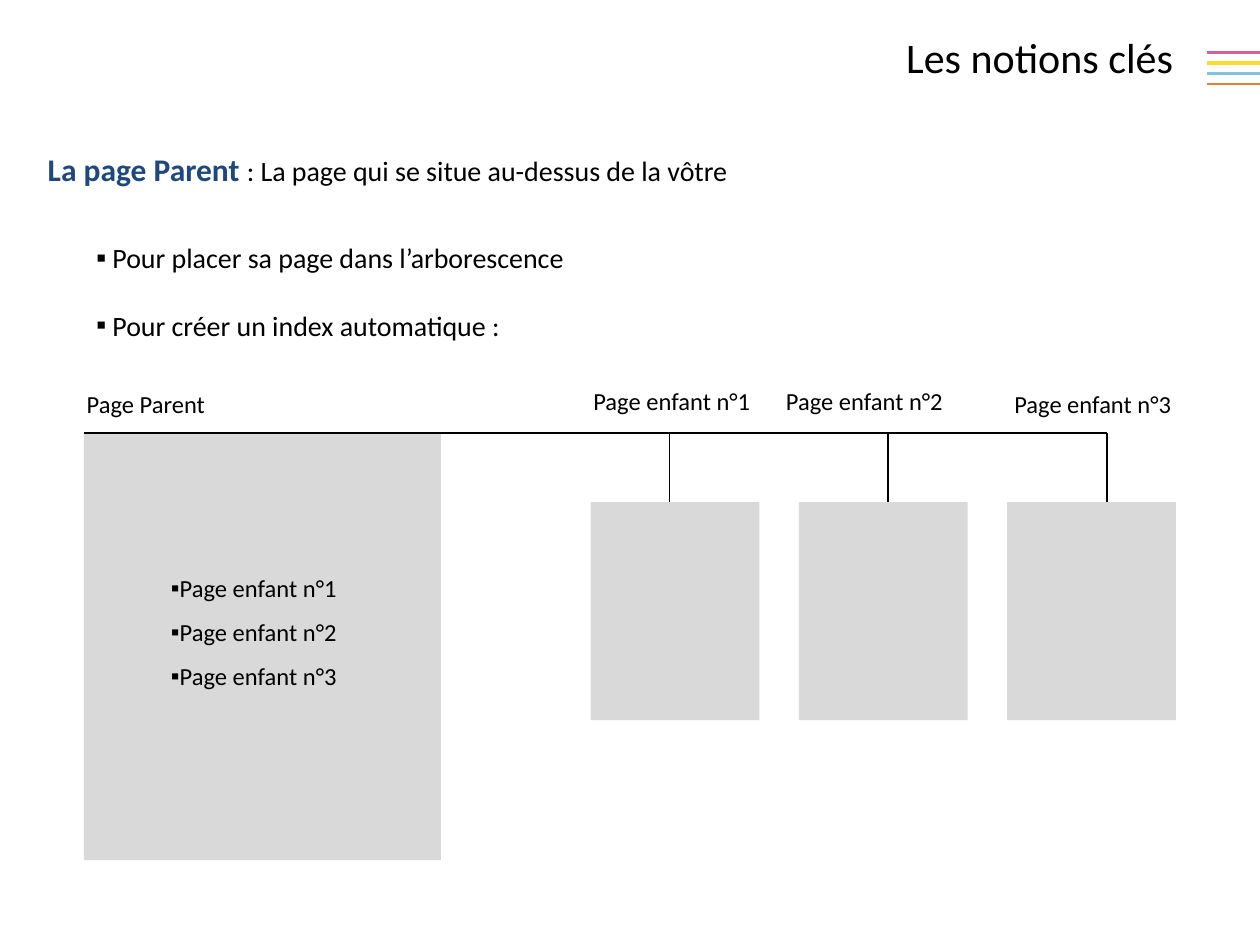
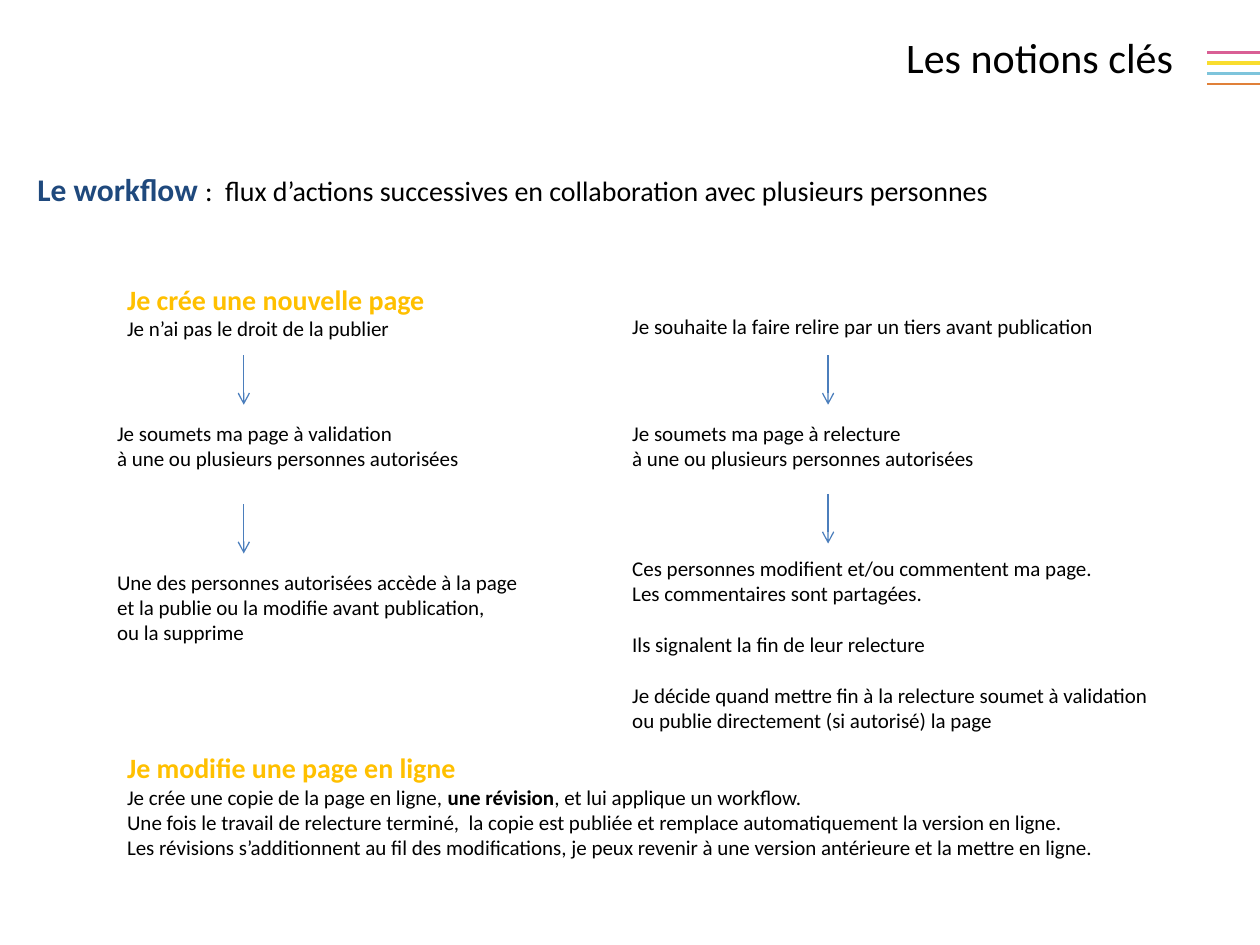
import pptx
import pptx.dml.color
import pptx.enum.shapes
import pptx.enum.text
import pptx.util
from lxml import etree
from pptx.oxml.ns import qn

Pt = pptx.util.Pt
Align = pptx.enum.text.PP_ALIGN


class Theme:
    font = "Calibri"
    black, blue, gold = "000000", "1F497D", "FFC000"
    panel, arrow = "D9D9D9", "4B7EBC"
    # Colour and width of each stripe, top to bottom
    bands = [("D95F95", 1.25), ("F9DD2E", 2), ("7EC4DB", 1.75), ("E08039", 1.5)]
    # Style: size, colour, bold
    styles = {
        "title": (24, black, False),
        "term": (18, blue, True),
        "lead": (16, black, False),
        "head": (16, gold, True),
        "label": (14, black, False),
        "note": (12, black, False),
        "strong": (12, black, True),
    }


# Basic helpers
def apply(target, values):
    for name, value in values.items():
        setattr(target, name, value)


def color(code):
    return pptx.dml.color.RGBColor.from_string(code)


def para(*runs, **form):
    return runs, form


def bullet(item, indent, face):
    """Give a paragraph a small square bullet with a hanging indent."""
    props = item._p.get_or_add_pPr()
    apply_xml = {"marL": Pt(indent), "indent": -Pt(indent)}
    for name, value in apply_xml.items():
        props.set(name, str(value))
    etree.SubElement(props, qn("a:buFont")).set("typeface", face)
    etree.SubElement(props, qn("a:buChar")).set("char", "▪")


# Kinds of element
def text(slide, box, paras, style="note", wrap=False, mark=None):
    """Each paragraph is a string, or para() with (text, style) runs."""
    frame = slide.shapes.add_textbox(*map(Pt, box)).text_frame
    apply(frame, {"word_wrap": wrap,
                  "auto_size": pptx.enum.text.MSO_AUTO_SIZE.SHAPE_TO_FIT_TEXT})
    for index, entry in enumerate(paras):
        runs, form = para(entry) if isinstance(entry, str) else entry
        item = frame.add_paragraph() if index else frame.paragraphs[0]
        apply(item, form)
        if mark:
            bullet(item, *mark)
        for part in runs:
            words, kind = (part, style) if isinstance(part, str) else part
            size, tint, bold = Theme.styles[kind]
            run = item.add_run()
            run.text = words
            apply(run.font, {"name": Theme.font, "size": Pt(size), "bold": bold})
            run.font.color.rgb = color(tint)


def panel(slide, box):
    kind = pptx.enum.shapes.MSO_SHAPE.RECTANGLE
    shape = slide.shapes.add_shape(kind, *map(Pt, box))
    shape.shadow.inherit = False
    shape.fill.solid()
    shape.fill.fore_color.rgb = color(Theme.panel)
    shape.line.fill.background()


def line(slide, ends, tint=Theme.black, width=0.75, arrow=False):
    kind = pptx.enum.shapes.MSO_CONNECTOR.STRAIGHT
    link = slide.shapes.add_connector(kind, *map(Pt, ends))
    link.line.color.rgb = color(tint)
    link.line.width = Pt(width)
    if arrow:
        etree.SubElement(link.line._get_or_add_ln(), qn("a:tailEnd")).set("type", "arrow")
    etree.SubElement(link._element.spPr, qn("a:effectLst"))


def start(deck, title):
    """Add a slide with the shared stripes and title."""
    slide = deck.slides.add_slide(deck.slide_layouts[6])
    for row, (tint, width) in enumerate(Theme.bands):
        y = 30 + 6 * row
        line(slide, (690, y, 720, y), tint, width)
    text(slide, (509, 14.4, 168.5, 58.3), [para(title, alignment=Align.RIGHT)], "title")
    return slide


# Slides
def parent(deck):
    slide = start(deck, "Les notions clés")
    text(slide, (20.2, 82, 407.5, 29),
         [para(("La page Parent ", "term"), ": La page qui se situe au-dessus de la vôtre")],
         "lead")
    text(slide, (48, 134, 360, 65.5),
         ["Pour placer sa page dans l’arborescence",
          para("Pour créer un index automatique :", space_before=Pt(19.5))],
         "lead", wrap=True, mark=(9.2, Theme.font))

    # Parent page and its index
    top, low = 247.5, 287
    panel(slide, (48, top, 204, 244))
    kids = [f"Page enfant n°{number}" for number in (1, 2, 3)]
    text(slide, (42.5, 218.8, 83, 24.5), ["Page Parent"], "label")
    text(slide, (90.6, 315.4, 110, 83.5),
         [para(kid, line_spacing=1.5) for kid in kids], "label", mark=(5, "Arial"))

    # Child pages hung from the trunk
    spots = [(332, 217.3), (442, 217.3), (572.5, 218.8)]
    for index, (kid, spot) in enumerate(zip(kids, spots)):
        panel(slide, (337.5 + 119 * index, low, 96.5, 124.5))
        stem = 382.5 + 125 * index
        line(slide, (stem, top, stem, low))
        text(slide, (*spot, 105, 24.5), [kid], "label")
    line(slide, (48, top, 632.5, top))


def flow(deck):
    slide = start(deck, "Les notions clés")
    text(slide, (14.3, 93.6, 565.2, 29),
         [para(("Le workflow ", "term"),
               ":  flux d’actions successives en collaboration avec plusieurs personnes")],
         "lead")

    # Steps of the two columns
    left, right, gap = 59.8, 354.2, Pt(14.6)
    who = "à une ou plusieurs personnes autorisées"
    text(slide, (65.5, 157.7, 186.5, 85),
         [para(("Je crée une nouvelle page", "head")), "Je n’ai pas le droit de la publier"])
    text(slide, (right, 175.7, 281, 21.6),
         ["Je souhaite la faire relire par un tiers avant publication"])
    for x, goal in ((left, "validation"), (right, "relecture")):
        text(slide, (x, 236.9, 211.7, 36), [f"Je soumets ma page à {goal}", who])
    text(slide, (left, 321.8, 249, 51),
         ["Une des personnes autorisées accède à la page",
          "et la publie ou la modifie avant publication,",
          "ou la supprime"])
    text(slide, (right, 313.9, 315.4, 108.7),
         ["Ces personnes modifient et/ou commentent ma page.",
          "Les commentaires sont partagées.",
          para("Ils signalent la fin de leur relecture", space_before=gap),
          para("Je décide quand mettre fin à la relecture soumet à validation",
               space_before=gap),
          "ou publie directement (si autorisé) la page"])

    # Arrows between steps
    for x, y in ((139.3, 203), (139.3, 288), (473.2, 203), (473.2, 282.3)):
        line(slide, (x, y, x, y + 28.3), Theme.arrow, arrow=True)

    # Changing a live page
    text(slide, (65.5, 425.5, 572.4, 133),
         [para(("Je modifie une page en ligne", "head")),
          para("Je crée une copie de la page en ligne, ", ("une révision", "strong"),
               ", et lui applique un workflow."),
          "Une fois le travail de relecture terminé,  la copie est publiée et remplace "
          "automatiquement la version en ligne.",
          "Les révisions s’additionnent au fil des modifications, je peux revenir à une "
          "version antérieure et la mettre en ligne."])


def main():
    deck = pptx.Presentation()
    apply(deck, {"slide_width": Pt(720), "slide_height": Pt(540)})
    parent(deck)
    flow(deck)
    deck.save("out.pptx")


if __name__ == "__main__":
    main()
